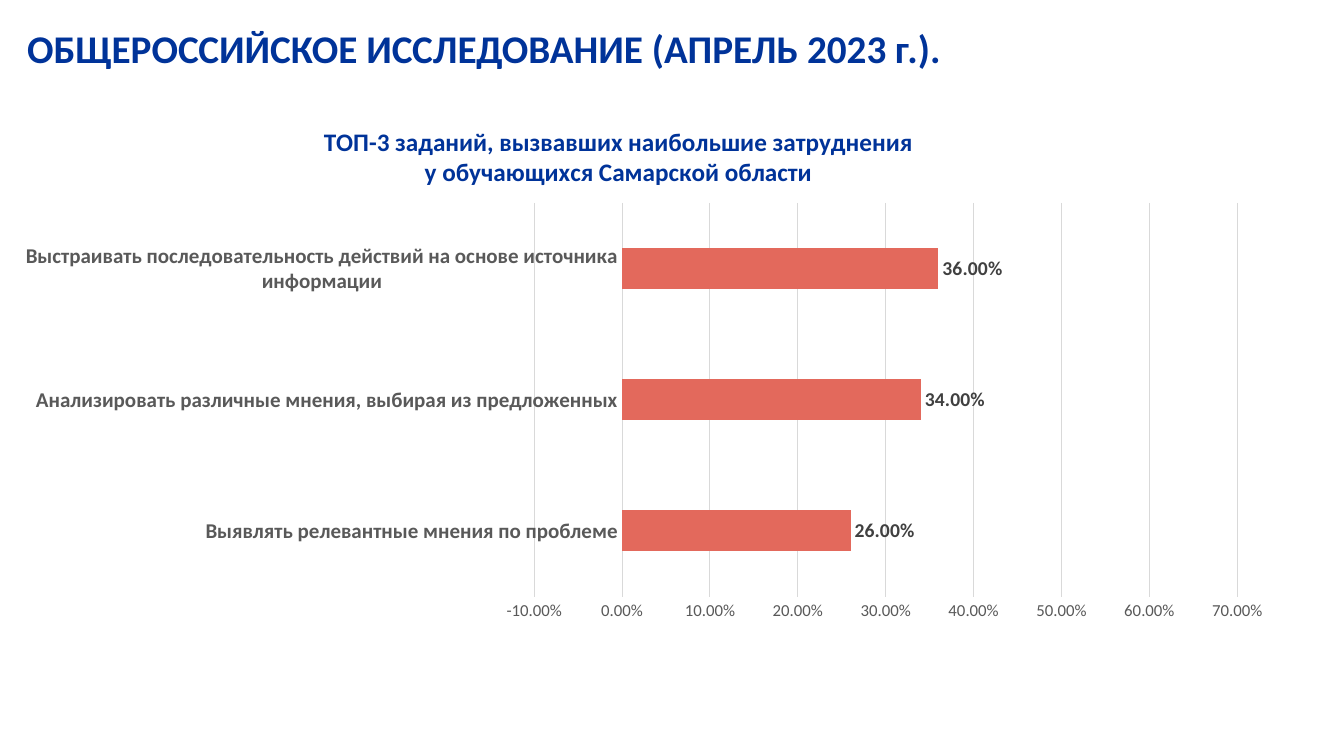
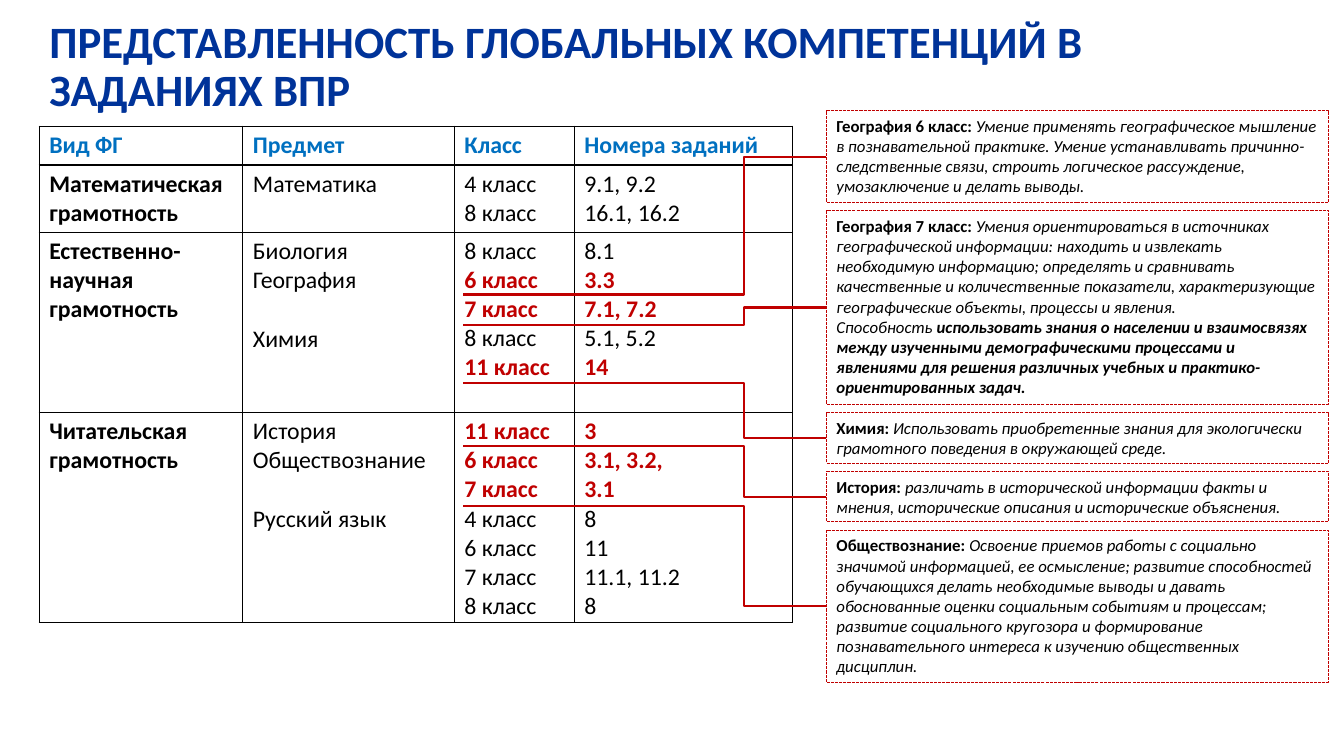
"""Build two slides on global competences: a bar chart and a table with callouts."""

from dataclasses import dataclass

from lxml import etree
from pptx import Presentation
from pptx.chart.data import CategoryChartData
from pptx.dml.color import RGBColor
from pptx.enum.chart import XL_CHART_TYPE, XL_LABEL_POSITION, XL_TICK_MARK
from pptx.enum.dml import MSO_LINE
from pptx.enum.shapes import MSO_CONNECTOR, MSO_SHAPE
from pptx.enum.text import MSO_ANCHOR, PP_ALIGN
from pptx.oxml.ns import qn
from pptx.presentation import Presentation as Deck
from pptx.shapes.autoshape import Shape
from pptx.slide import Slide
from pptx.table import _Cell as Cell
from pptx.text.text import Font
from pptx.text.text import _Paragraph as Paragraph
from pptx.util import Cm, Pt

BAR_CLUSTERED = XL_CHART_TYPE.BAR_CLUSTERED
OUTSIDE_END = XL_LABEL_POSITION.OUTSIDE_END
NO_TICK = XL_TICK_MARK.NONE
SYSTEM_DASH = MSO_LINE.SQUARE_DOT
ELBOW = MSO_CONNECTOR.ELBOW
RECTANGLE = MSO_SHAPE.RECTANGLE
TOP, MIDDLE = MSO_ANCHOR.TOP, MSO_ANCHOR.MIDDLE
LEFT = PP_ALIGN.LEFT

FONT_NAME = "Calibri"
NAVY, BLUE, RED, CORAL = "003399", "0070C0", "C00000", "E3695C"
BLACK, DARK_GRAY, GRAY, LIGHT_GRAY = "000000", "404040", "595959", "D9D9D9"
TITLE_ONLY = 5
LEFT_SIDE = 1
TABLE_SIZE = 17
BLANK_LINE = 21

BOX_LEFT, BOX_TOP, BOX_WIDTH, BOX_GAP = 20.83, 2.79, 12.65, 0.21
ELBOW_X, LINE_END_X = 18.75, 11.66

COLUMN_WIDTHS = (5.13, 5.33, 3.02, 5.51)
ROW_HEIGHTS = (0.98, 1.69, 4.54, 5.29)


@dataclass(frozen=True)
class Line:
    """One line of a table cell."""

    text: str
    color: str = BLACK
    bold: bool = False
    space_before: int = 0


@dataclass(frozen=True)
class Callout:
    """A described task with the height at which its pointer ends."""

    heading: str
    text: str
    height: float
    pointer_y: float
    extra: str = ""
    extra_bold: str = ""


def heading(text: str) -> tuple[Line]:
    return (Line(text, BLUE, True),)


def strong(text: str) -> Line:
    return Line(text, bold=True)


def red(text: str) -> Line:
    return Line(text, RED, True)


def plain(*texts: str) -> tuple[Line, ...]:
    return tuple(Line(text) for text in texts)


def spaced(text: str) -> Line:
    return Line(text, space_before=BLANK_LINE)


TABLE_ROWS = (
    tuple(heading(text) for text in ("Вид ФГ", "Предмет", "Класс", "Номера заданий")),
    (
        (strong("Математическая грамотность"),),
        plain("Математика"),
        plain("4 класс", "8 класс"),
        plain("9.1, 9.2", "16.1, 16.2"),
    ),
    (
        (strong("Естественно-научная грамотность"),),
        (*plain("Биология", "География"), spaced("Химия")),
        (Line("8 класс"), red("6 класс"), red("7 класс"), Line("8 класс"), red("11 класс")),
        (Line("8.1"), red("3.3"), red("7.1, 7.2"), Line("5.1, 5.2"), red("14")),
    ),
    (
        (strong("Читательская грамотность"),),
        (*plain("История", "Обществознание"), spaced("Русский язык")),
        (red("11 класс"), red("6 класс"), red("7 класс"),
         *plain("4 класс", "6 класс", "7 класс", "8 класс")),
        (red("3"), red("3.1, 3.2,"), red("3.1"), *plain("8", "11", "11.1, 11.2", "8")),
    ),
)

CALLOUTS = (
    Callout(
        "География 6 класс: ",
        "Умение применять географическое мышление в познавательной практике. Умение "
        "устанавливать причинно-следственные связи, строить логическое рассуждение, "
        "умозаключение и делать выводы.",
        2.31, 7.42,
    ),
    Callout(
        "География 7 класс: ",
        "Умения ориентироваться в источниках географической информации: находить и извлекать "
        "необходимую информацию; определять и сравнивать качественные и количественные "
        "показатели, характеризующие географические объекты, процессы и явления.",
        4.88, 8.2,
        "Способность ",
        "использовать знания о населении и взаимосвязях между изученными демографическими "
        "процессами и явлениями для решения различных учебных и практико-ориентированных задач.",
    ),
    Callout(
        "Химия: ",
        "Использовать приобретенные знания для экологически грамотного поведения в "
        "окружающей среде.",
        1.27, 9.65,
    ),
    Callout(
        "История: ",
        "различать в исторической информации факты и мнения, исторические описания и "
        "исторические объяснения.",
        1.27, 11.25,
    ),
    Callout(
        "Обществознание: ",
        "Освоение приемов работы с социально значимой информацией, ее осмысление; развитие "
        "способностей обучающихся делать необходимые выводы и давать обоснованные оценки "
        "социальным событиям и процессам;",
        3.84, 12.75,
        "развитие социального кругозора и формирование познавательного интереса к изучению "
        "общественных дисциплин.",
    ),
)


def rgb(color: str) -> RGBColor:
    return RGBColor.from_string(color)


def format_font(font: Font, *, size: float, color: str, bold: bool = False,
                italic: bool = False) -> None:
    font.name, font.size = FONT_NAME, Pt(size)
    font.bold, font.italic = bold, italic
    font.color.rgb = rgb(color)


def add_text(paragraph: Paragraph, text: str, *, size: float, color: str = BLACK,
             bold: bool = False, italic: bool = False) -> None:
    run = paragraph.add_run()
    run.text = text
    format_font(run.font, size=size, color=color, bold=bold, italic=italic)


def add_titled_slide(presentation: Deck, text: str, *, left: float, top: float, width: float,
                     height: float, size: float, anchor: MSO_ANCHOR) -> Slide:
    slide = presentation.slides.add_slide(presentation.slide_layouts[TITLE_ONLY])
    title = slide.shapes.title
    title.left, title.top, title.width, title.height = map(Cm, (left, top, width, height))
    title.text_frame.vertical_anchor = anchor
    title.text_frame.word_wrap = True
    paragraph = title.text_frame.paragraphs[0]
    paragraph.alignment, paragraph.line_spacing = LEFT, 0.9
    add_text(paragraph, text, size=size, color=NAVY, bold=True)
    return slide


def set_layout(element: etree.ElementBase, index: int, **values: str) -> None:
    for old_layout in element.findall(qn("c:layout")):
        element.remove(old_layout)
    layout = etree.Element(qn("c:layout"))
    element.insert(index, layout)
    manual = etree.SubElement(layout, qn("c:manualLayout"))
    for name, value in values.items():
        etree.SubElement(manual, qn(f"c:{name}")).set("val", value)


def add_difficulty_chart(slide: Slide) -> None:
    data = CategoryChartData(number_format="0.00%")
    data.categories = (
        "Выявлять релевантные мнения по проблеме",
        "Анализировать различные мнения, выбирая из предложенных",
        "Выстраивать последовательность действий на основе источника информации",
    )
    data.add_series("Series 1", (0.26, 0.34, 0.36))
    chart = slide.shapes.add_chart(
        BAR_CLUSTERED, Cm(0.53), Cm(2.64), Cm(31.47), Cm(14.53), data).chart
    chart.has_legend = False
    format_font(chart.font, size=10, color=BLACK)

    title_frame = chart.chart_title.text_frame
    for paragraph, text in (
        (title_frame.paragraphs[0], "ТОП-3 заданий, вызвавших наибольшие затруднения"),
        (title_frame.add_paragraph(), "у обучающихся Самарской области"),
    ):
        add_text(paragraph, text, size=18, color=NAVY, bold=True)
    set_layout(chart.chart_title._element, 1, xMode="edge", yMode="edge", x="0.24", y="0.03")
    set_layout(chart._chartSpace.chart.plotArea, 0, layoutTarget="inner", xMode="edge",
               yMode="edge", x="0.411", y="0.17", w="0.563", h="0.683")

    categories, values = chart.category_axis, chart.value_axis
    for axis, size, bold in ((categories, 15, True), (values, 12, False)):
        axis.major_tick_mark = axis.minor_tick_mark = NO_TICK
        format_font(axis.tick_labels.font, size=size, color=GRAY, bold=bold)
    values.minimum_scale, values.maximum_scale, values.major_unit = -0.1, 0.7, 0.1
    values.tick_labels.number_format = "0.00%"
    values.tick_labels.number_format_is_linked = False
    values.format.line.fill.background()
    for line in (categories.format.line, values.major_gridlines.format.line):
        line.color.rgb, line.width = rgb(LIGHT_GRAY), Pt(0.75)

    plot = chart.plots[0]
    plot.gap_width, plot.vary_by_categories = 219, False
    fill = plot.series[0].format.fill
    fill.solid()
    fill.fore_color.rgb = rgb(CORAL)
    labels = plot.series[0].data_labels
    labels.show_value, labels.position = True, OUTSIDE_END
    labels.number_format, labels.number_format_is_linked = "0.00%", False
    format_font(labels.font, size=14, color=DARK_GRAY, bold=True)


def fill_cell(cell: Cell, lines: tuple[Line, ...]) -> None:
    cell.fill.background()
    cell.margin_top, cell.margin_bottom = Cm(0.12), Cm(0.03)
    properties = cell._tc.get_or_add_tcPr()
    for index, side in enumerate(("lnL", "lnR", "lnT", "lnB")):
        border = etree.Element(qn(f"a:{side}"), w=str(Pt(1)))
        solid = etree.SubElement(border, qn("a:solidFill"))
        etree.SubElement(solid, qn("a:srgbClr")).set("val", BLACK)
        properties.insert(index, border)
    frame = cell.text_frame
    for index, line in enumerate(lines):
        paragraph = frame.add_paragraph() if index else frame.paragraphs[0]
        paragraph.space_before = Pt(line.space_before)
        add_text(paragraph, line.text, size=TABLE_SIZE, color=line.color, bold=line.bold)


def add_task_table(slide: Slide) -> None:
    table = slide.shapes.add_table(
        len(ROW_HEIGHTS), len(COLUMN_WIDTHS), Cm(0.99), Cm(3.18),
        Cm(sum(COLUMN_WIDTHS)), Cm(sum(ROW_HEIGHTS))).table
    table.first_row = table.horz_banding = False
    for column, width in zip(table.columns, COLUMN_WIDTHS):
        column.width = Cm(width)
    for row, height, contents in zip(table.rows, ROW_HEIGHTS, TABLE_ROWS):
        row.height = Cm(height)
        for cell, lines in zip(row.cells, contents):
            fill_cell(cell, lines)


def add_callout_box(slide: Slide, callout: Callout, top: float) -> Shape:
    box = slide.shapes.add_shape(
        RECTANGLE, Cm(BOX_LEFT), Cm(top), Cm(BOX_WIDTH), Cm(callout.height))
    box.shadow.inherit = False
    box.fill.background()
    box.line.color.rgb, box.line.width = rgb(RED), Pt(0.75)
    box.line.dash_style = SYSTEM_DASH
    frame = box.text_frame
    frame.word_wrap, frame.vertical_anchor = True, TOP
    paragraph = frame.paragraphs[0]
    paragraph.alignment = LEFT
    add_text(paragraph, callout.heading, size=12, bold=True)
    add_text(paragraph, callout.text, size=12, italic=True)
    if callout.extra:
        paragraph = frame.add_paragraph()
        paragraph.alignment = LEFT
        add_text(paragraph, callout.extra, size=12, italic=True)
    if callout.extra_bold:
        add_text(paragraph, callout.extra_bold, size=12, bold=True, italic=True)
    return box


def add_pointer(slide: Slide, box: Shape, end_y: float) -> None:
    pointer = slide.shapes.add_connector(
        ELBOW, box.left, box.top + box.height // 2, Cm(LINE_END_X), Cm(end_y))
    pointer.begin_connect(box, LEFT_SIDE)
    pointer.line.color.rgb, pointer.line.width = rgb(RED), Pt(1.5)
    properties = pointer._element.spPr
    etree.SubElement(properties, qn("a:effectLst"))
    bend = round(100000 * (BOX_LEFT - ELBOW_X) / (BOX_LEFT - LINE_END_X))
    adjustments = properties.find(qn("a:prstGeom")).find(qn("a:avLst"))
    etree.SubElement(adjustments, qn("a:gd"), name="adj1", fmla=f"val {bend}")


def main() -> None:
    presentation = Presentation()
    presentation.slide_width, presentation.slide_height = Cm(33.87), Cm(19.05)

    chart_slide = add_titled_slide(
        presentation, "ОБЩЕРОССИЙСКОЕ ИССЛЕДОВАНИЕ (АПРЕЛЬ 2023 г.).",
        left=0.43, top=0.08, width=29.21, height=2.39, size=28, anchor=MIDDLE)
    add_difficulty_chart(chart_slide)

    table_slide = add_titled_slide(
        presentation, "ПРЕДСТАВЛЕННОСТЬ ГЛОБАЛЬНЫХ КОМПЕТЕНЦИЙ В ЗАДАНИЯХ ВПР",
        left=0.99, top=0.36, width=31.24, height=2.72, size=32, anchor=TOP)
    add_task_table(table_slide)
    top = BOX_TOP
    for callout in CALLOUTS:
        box = add_callout_box(table_slide, callout, top)
        add_pointer(table_slide, box, callout.pointer_y)
        top += callout.height + BOX_GAP

    presentation.save("out.pptx")


if __name__ == "__main__":
    main()
